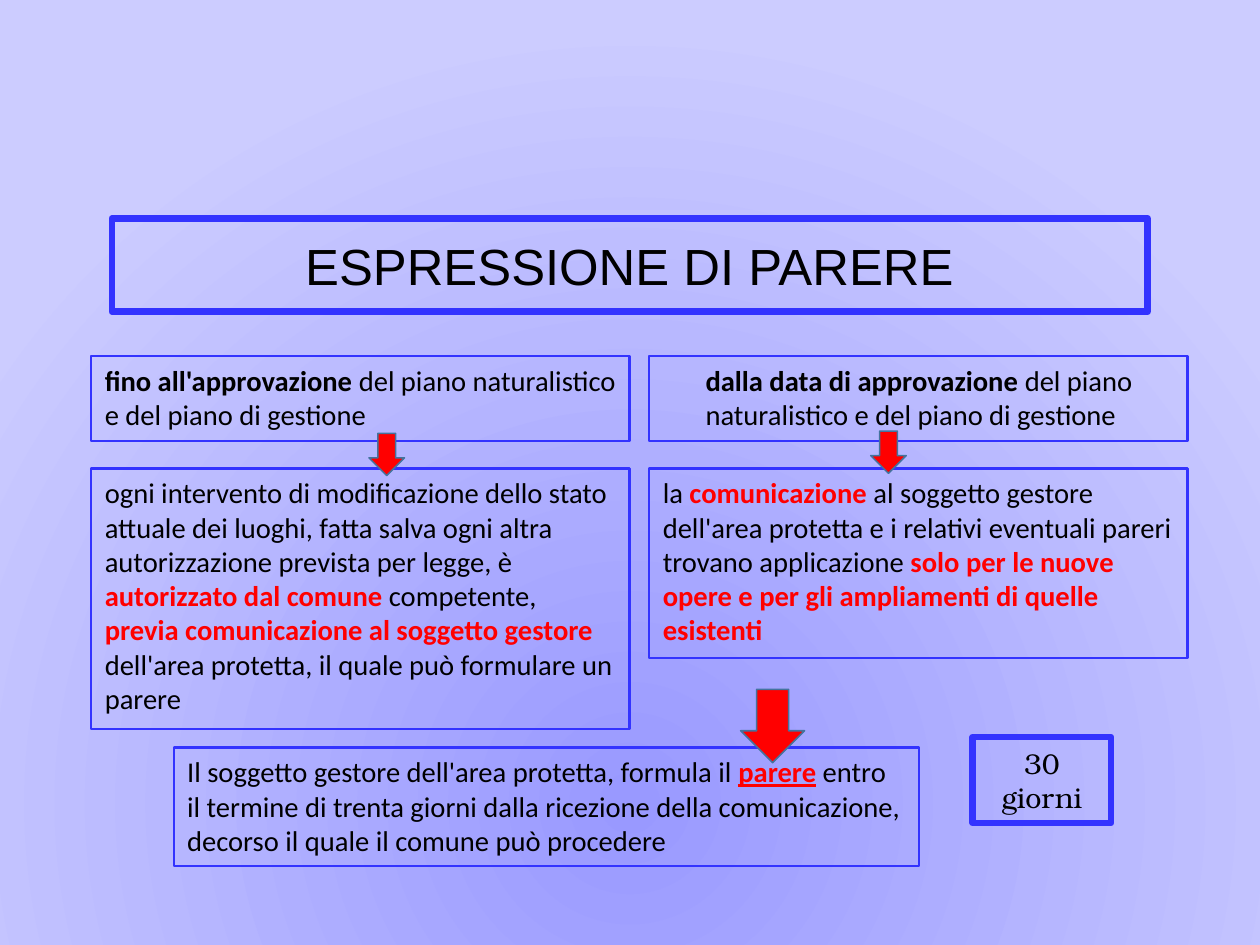
"""Build the slide on how the protected-area opinion is given."""
from lxml import etree
from pptx import Presentation
from pptx.dml.color import RGBColor
from pptx.enum.shapes import MSO_SHAPE
from pptx.enum.text import MSO_ANCHOR, MSO_AUTO_SIZE, PP_ALIGN
from pptx.oxml.ns import qn
from pptx.util import Cm, Pt

RECTANGLE, DOWN_ARROW = MSO_SHAPE.RECTANGLE, MSO_SHAPE.DOWN_ARROW
TOP, MIDDLE = MSO_ANCHOR.TOP, MSO_ANCHOR.MIDDLE
LEFT, CENTER = PP_ALIGN.LEFT, PP_ALIGN.CENTER
NO_FIT = MSO_AUTO_SIZE.NONE

COLORS = {"inner": "9999FF", "outer": "CCCCFF", "border": "3333FF",
          "text": "000000", "red": "FF0000", "arrow_border": "43739E"}
STYLES = {
    "plain": ("text", {"bold": False}),
    "strong": ("text", {"bold": True}),
    "alert": ("red", {"bold": True}),
    "key": ("red", {"bold": True, "underline": True}),
}

COLUMN_LEFTS = (2.03, 14.43)
COLUMN_WIDTH = 11.96
HEADING_TOP, HEADING_HEIGHT, BODY_TOP = 7.92, 1.88, 10.41

TITLE = ("ESPRESSIONE DI PARERE", (2.49, 4.85, 23.01, 2.08))
COLUMNS = [
    {"heading": [("fino all'approvazione ", "strong"),
                 ("del piano naturalistico e del piano di gestione", "plain")],
     "heading_indent": 0.3,
     "body": [("ogni intervento di modificazione dello stato attuale dei luoghi, "
               "fatta salva ogni altra autorizzazione prevista per legge, è ", "plain"),
              ("autorizzato dal comune", "alert"),
              (" competente, ", "plain"),
              ("previa comunicazione al soggetto gestore ", "alert"),
              ("dell'area protetta, il quale può formulare un parere", "plain")],
     "body_height": 5.79},
    {"heading": [("dalla data di approvazione ", "strong"),
                 ("del piano naturalistico e del piano di gestione", "plain")],
     "heading_indent": 1.25,
     "body": [("la ", "plain"),
              ("comunicazione", "alert"),
              (" al soggetto gestore dell'area protetta e i relativi eventuali "
               "pareri trovano applicazione ", "plain"),
              ("solo per le nuove opere e per gli ampliamenti di quelle esistenti",
               "alert")],
     "body_height": 4.22},
]
OPINION = ([("Il soggetto gestore dell'area protetta, formula il ", "plain"),
            ("parere", "key"),
            (" entro il termine di trenta giorni dalla ricezione della "
             "comunicazione, decorso il quale il comune può procedere", "plain")],
           (3.86, 16.61, 16.56, 2.64))
DEADLINE = ([("30 giorni", "plain")], (21.62, 16.38, 3.07, 1.91))
ARROWS = [(8.2, 9.63, 0.79, 0.94), (19.35, 9.58, 0.79, 0.94),
          (16.46, 15.32, 1.42, 1.63)]


def rgb(name):
    return RGBColor.from_string(COLORS[name])


def apply(target, values):
    for name, value in values.items():
        setattr(target, name, value)


def paint_background(slide):
    fill = slide.background.fill
    fill.gradient()
    for stop, name in zip(fill.gradient_stops, ("inner", "outer")):
        stop.color.rgb = rgb(name)
    gradient = slide.element.find(".//" + qn("a:gradFill"))
    gradient.remove(gradient.find(qn("a:lin")))
    circle = etree.SubElement(gradient, qn("a:path"), {"path": "circle"})
    etree.SubElement(circle, qn("a:fillToRect"),
                     {"l": "50000", "t": "85000", "r": "50000", "b": "15000"})


def outline(shape, width, color="border"):
    shape.line.color.rgb = rgb(color)
    shape.line.width = Pt(width)


def write(shape, runs, insets, font="Calibri", size=18, align=LEFT, anchor=TOP):
    frame = shape.text_frame
    left, top, right, bottom = (Cm(inset) for inset in insets)
    apply(frame, {"margin_left": left, "margin_top": top, "margin_right": right,
                  "margin_bottom": bottom, "word_wrap": True,
                  "auto_size": NO_FIT, "vertical_anchor": anchor})
    paragraph = frame.paragraphs[0]
    paragraph.alignment = align
    for text, style in runs:
        color, values = STYLES[style]
        run = paragraph.add_run()
        run.text = text
        apply(run.font, {"name": font, "size": Pt(size), **values})
        run.font.color.rgb = rgb(color)


def add_shape(slide, kind, place):
    shape = slide.shapes.add_shape(kind, *(Cm(length) for length in place))
    shape.shadow.inherit = False
    return shape


def add_box(slide, runs, place, indent=0.3, line_width=1.42,
            margins=(0.15, 0.3, 0.15), **text_format):
    box = add_shape(slide, RECTANGLE, place)
    box.fill.background()
    outline(box, line_width)
    write(box, runs, (indent, *margins), **text_format)


def add_title(slide):
    text, place = TITLE
    title = slide.shapes.title
    apply(title, dict(zip(("left", "top", "width", "height"), map(Cm, place))))
    outline(title, 4.25)
    write(title, [(text, "plain")], (0.08,) * 4, font="Arial", size=32,
          align=CENTER, anchor=MIDDLE)


def main():
    presentation = Presentation()
    presentation.slide_width, presentation.slide_height = Cm(28), Cm(21)
    slide = presentation.slides.add_slide(presentation.slide_layouts[5])
    paint_background(slide)
    add_title(slide)
    for left, column in zip(COLUMN_LEFTS, COLUMNS):
        add_box(slide, column["heading"],
                (left, HEADING_TOP, COLUMN_WIDTH, HEADING_HEIGHT),
                indent=column["heading_indent"])
        add_box(slide, column["body"],
                (left, BODY_TOP, COLUMN_WIDTH, column["body_height"]))
    add_box(slide, *OPINION)
    add_box(slide, *DEADLINE, indent=0.33, line_width=4.25,
            margins=(0.2, 0.33, 0.2), font="TeX Gyre Bonum", align=CENTER)
    for place in ARROWS:
        arrow = add_shape(slide, DOWN_ARROW, place)
        arrow.fill.solid()
        arrow.fill.fore_color.rgb = rgb("red")
        outline(arrow, 1, "arrow_border")
    presentation.save("out.pptx")


if __name__ == "__main__":
    main()
